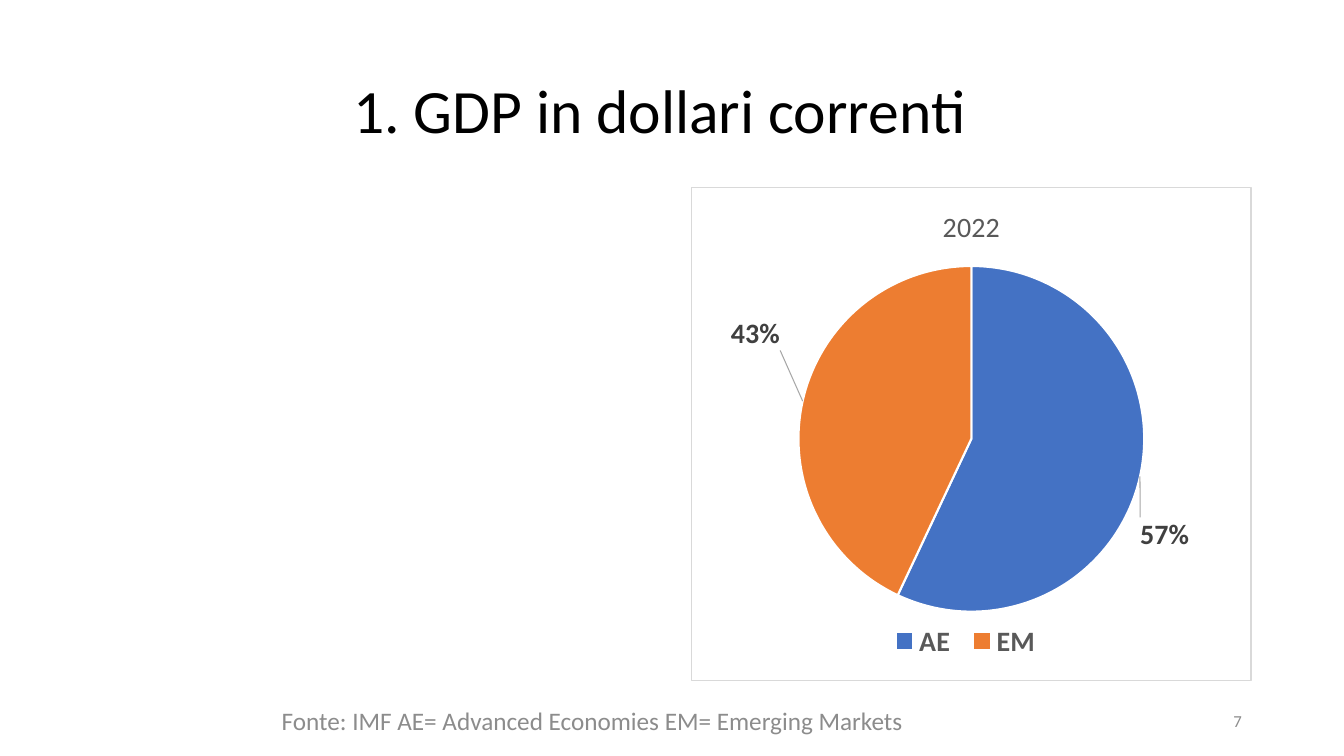
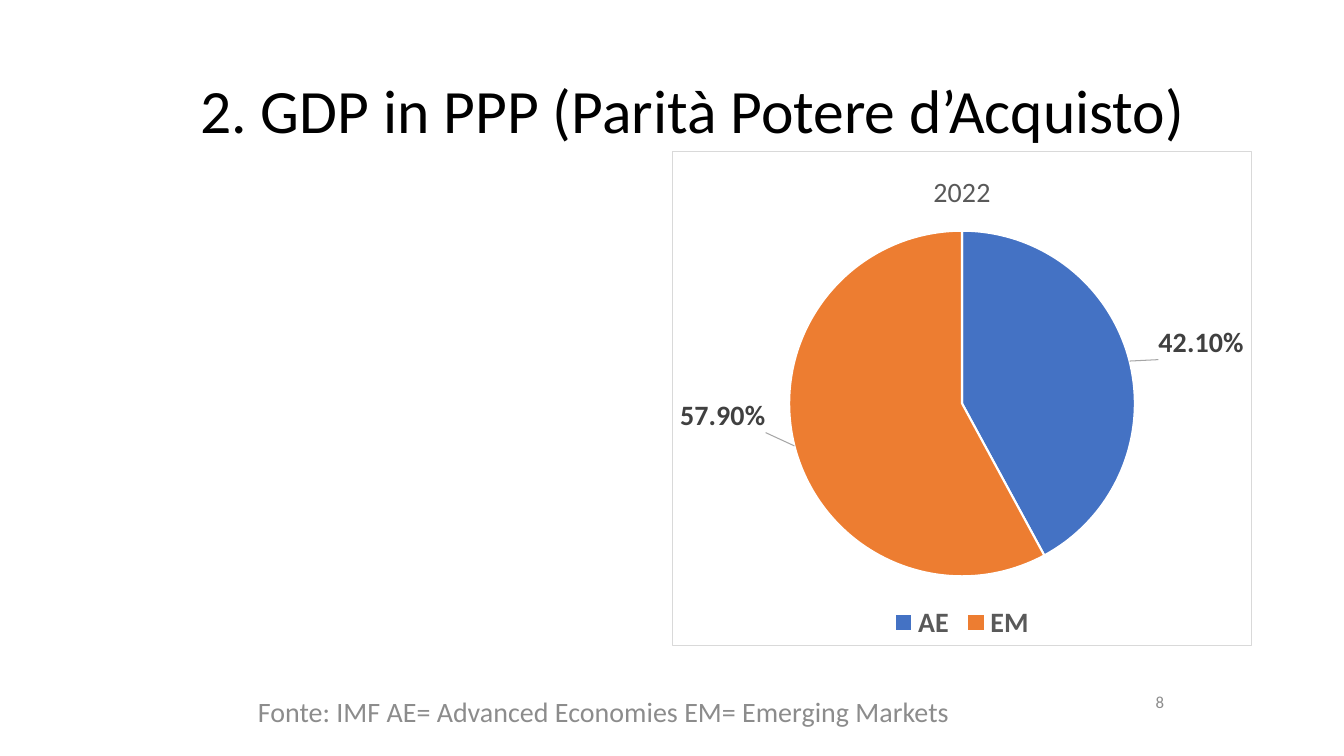
from lxml import etree
from pptx import Presentation
from pptx import util as u
from pptx.chart import data
from pptx.dml import color
from pptx.enum import chart as charts, text
from pptx.oxml import ns, parse_xml

SOURCE = "Fonte: IMF AE= Advanced Economies EM= Emerging Markets"
CATEGORIES = ("AE", "EM")

PAGES = [
    {
        "title": "1. GDP in dollari correnti",
        "indent": 6.56,
        "chart": (17.42, 4.7, 14.12, 12.47),
        "shares": (0.57, 0.43),
        "number_format": "0%",
        "label_shifts": ((-0.01, 0.08), (-0.03, -0.1)),
        "legend": (0.34, 0.88, 0.3, 0.08),
        "source": (5.54, 17.65, 18.77, 1.02),
        "source_size": 18,
        "number": "7",
        "number_bounds": (23.93, 17.65, 7.62, 1.02),
    },
    {
        "title": "2. GDP in PPP (Parità Potere d’Acquisto)",
        "indent": 2.71,
        "chart": (16.94, 3.81, 14.61, 12.47),
        "shares": (0.421, 0.579),
        "number_format": "0.00%",
        "label_shifts": ((0.04, 0), (-0.04, -0.1)),
        "legend": None,
        "source": (5.33, 17.17, 19.76, 1.52),
        "source_size": 20,
        "number": "8",
        "number_bounds": (21.97, 17.17, 7.62, 1.02),
    },
]


def rgb(value):
    return color.RGBColor.from_string(value)


def lengths(bounds):
    return [u.Cm(value) for value in bounds]


def assign(target, values):
    for name, value in values.items():
        setattr(target, name, value)


def manual_layout(values, inner=False):
    layout = parse_xml(f"<c:layout {ns.nsdecls('c')}><c:manualLayout/></c:layout>")
    settings = {"layoutTarget": "inner"} if inner else {}
    if len(values) == 4:
        settings.update(xMode="edge", yMode="edge")
    settings.update(zip("xywh", values))
    for name, value in settings.items():
        etree.SubElement(layout[0], ns.qn(f"c:{name}")).set("val", str(value))
    return layout


class Deck:
    FONT = "Calibri"
    BLACK = "000000"
    MUTED = "8C8C8C"
    CHART_TEXT = "595959"
    LABEL_TEXT = "404040"
    SLICES = ("4472C4", "ED7D31")
    PLOT = (0.1, 0.16, 0.8, 0.7)

    def __init__(self):
        self.presentation = Presentation()
        assign(self.presentation, {"slide_width": u.Cm(33.87), "slide_height": u.Cm(19.05)})
        self.page = None

    def add_page(self):
        self.page = self.presentation.slides.add_slide(self.presentation.slide_layouts[5])

    def style(self, font, size, shade, bold=False):
        assign(font, {"name": self.FONT, "size": u.Pt(size), "bold": bold})
        font.color.rgb = rgb(shade)

    def fill_text(self, box, words, size, shade, align):
        assign(box.text_frame, {
            "word_wrap": True,
            "auto_size": text.MSO_AUTO_SIZE.NONE,
            "vertical_anchor": text.MSO_ANCHOR.MIDDLE,
        })
        para = box.text_frame.paragraphs[0]
        para.alignment = align
        span = para.add_run()
        span.text = words
        self.style(span.font, size, shade)
        return para

    def title(self, words, indent):
        box = self.page.shapes.title
        assign(box, dict(zip(("left", "top", "width", "height"),
                             lengths((2.34, 1.02, 29.21, 3.68)))))
        para = self.fill_text(box, words, 44, self.BLACK, text.PP_ALIGN.LEFT)
        para.line_spacing = 0.9
        box.text_frame.margin_left = u.Cm(indent)

    def note(self, words, bounds, size, align):
        box = self.page.shapes.add_textbox(*lengths(bounds))
        self.fill_text(box, words, size, self.MUTED, align)

    def pie(self, bounds, shares, number_format, label_shifts, legend_bounds):
        values = data.CategoryChartData(number_format=number_format)
        values.categories = CATEGORIES
        values.add_series("2022", shares)
        chart = self.page.shapes.add_chart(
            charts.XL_CHART_TYPE.PIE, *lengths(bounds), values).chart
        self.style(chart.font, 10, self.BLACK)
        self.frame(chart)

        chart.has_title = True
        span = chart.chart_title.text_frame.paragraphs[0].add_run()
        span.text = "2022"
        self.style(span.font, 20, self.CHART_TEXT)

        chart.has_legend = True
        assign(chart.legend, {
            "position": charts.XL_LEGEND_POSITION.BOTTOM,
            "include_in_layout": False,
        })
        self.style(chart.legend.font, 20, self.CHART_TEXT, True)
        if legend_bounds:
            position = chart.element.xpath(".//c:legend/c:legendPos")[0]
            position.addnext(manual_layout(legend_bounds))

        area = chart.element.xpath(".//c:plotArea")[0]
        for layout in area.xpath("./c:layout"):
            area.remove(layout)
        area.insert(0, manual_layout(self.PLOT, inner=True))
        self.slices(chart, number_format, label_shifts)

    def frame(self, chart):
        border = parse_xml(
            f"<c:spPr {ns.nsdecls('c', 'a')}>"
            '<a:solidFill><a:srgbClr val="FFFFFF"/></a:solidFill>'
            '<a:ln w="9525"><a:solidFill><a:srgbClr val="D9D9D9"/></a:solidFill></a:ln>'
            "</c:spPr>")
        chart.element.xpath("./c:chart")[0].addnext(border)

    def slices(self, chart, number_format, label_shifts):
        plot = chart.plots[0]
        plot.vary_by_categories = True
        series = plot.series[0]
        labels = series.data_labels
        assign(labels, {
            "show_value": True,
            "show_percentage": False,
            "number_format": number_format,
            "number_format_is_linked": False,
            "position": charts.XL_LABEL_POSITION.OUTSIDE_END,
        })
        self.style(labels.font, 20, self.LABEL_TEXT, True)
        for index, shade in enumerate(self.SLICES):
            point = series.points[index]
            point.format.fill.solid()
            point.format.fill.fore_color.rgb = rgb(shade)
            point.format.line.width = u.Pt(1.5)
            point.format.line.color.rgb = rgb("FFFFFF")
            label = point.data_label
            self.style(label.font, 20, self.LABEL_TEXT, True)
            label.position = charts.XL_LABEL_POSITION.OUTSIDE_END
        for marker, shift in zip(chart.element.xpath(".//c:dLbl/c:idx"), label_shifts):
            marker.addnext(manual_layout(shift))
        leaders = parse_xml(
            f"<c:leaderLines {ns.nsdecls('c', 'a')}><c:spPr><a:ln w=\"9525\"><a:solidFill>"
            '<a:srgbClr val="A6A6A6"/></a:solidFill></a:ln></c:spPr></c:leaderLines>')
        for switch in chart.element.xpath(".//c:ser/c:dLbls/c:showLeaderLines"):
            switch.set("val", "1")
            switch.addnext(leaders)


def main():
    deck = Deck()
    for content in PAGES:
        deck.add_page()
        deck.title(content["title"], content["indent"])
        deck.pie(content["chart"], content["shares"], content["number_format"],
                 content["label_shifts"], content["legend"])
        deck.note(SOURCE, content["source"], content["source_size"], text.PP_ALIGN.CENTER)
        deck.note(content["number"], content["number_bounds"], 12, text.PP_ALIGN.RIGHT)
    deck.presentation.save("out.pptx")


if __name__ == "__main__":
    main()
